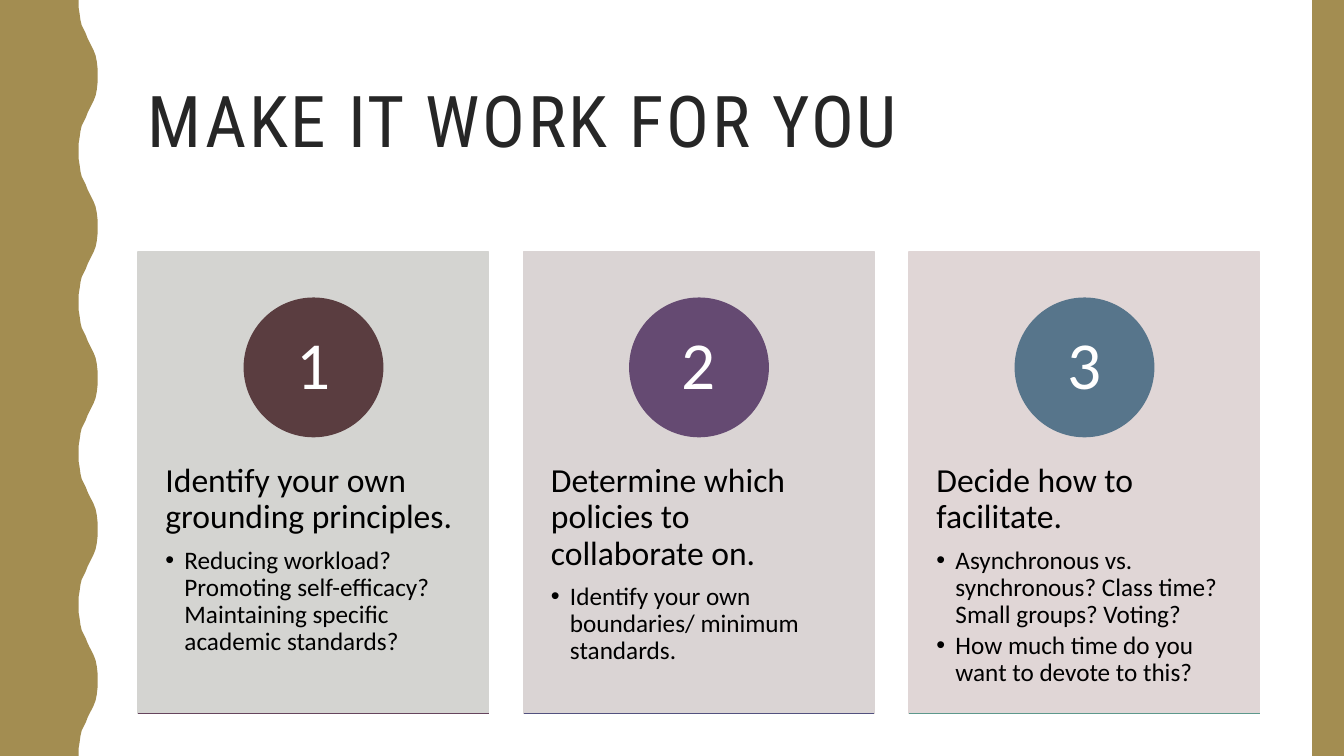
from lxml import etree
from pptx import Presentation
from pptx.dml.color import RGBColor
from pptx.enum.shapes import MSO_CONNECTOR, MSO_SHAPE
from pptx.enum.text import MSO_ANCHOR, PP_ALIGN
from pptx.oxml.ns import qn
from pptx.util import Cm, Pt

RECTANGLE, OVAL = MSO_SHAPE.RECTANGLE, MSO_SHAPE.OVAL
STRAIGHT = MSO_CONNECTOR.STRAIGHT
MIDDLE, CENTER = MSO_ANCHOR.MIDDLE, PP_ALIGN.CENTER

GOLD = RGBColor(0xA3, 0x8D, 0x51)
INK = RGBColor(0x26, 0x26, 0x26)
BLACK = RGBColor(0, 0, 0)
WHITE = RGBColor(0xFF, 0xFF, 0xFF)
GREY = RGBColor(0xD4, 0xD4, 0xD1)
MAUVE = RGBColor(0xDA, 0xD4, 0xD4)
ROSE = RGBColor(0xE0, 0xD6, 0xD6)
MAROON = RGBColor(0x5A, 0x3D, 0x40)
PURPLE = RGBColor(0x65, 0x4A, 0x72)
BLUE = RGBColor(0x57, 0x75, 0x8B)
PLUM = RGBColor(0x66, 0x44, 0x5D)
INDIGO = RGBColor(0x52, 0x51, 0x7F)
TEAL = RGBColor(0x5D, 0x98, 0x8C)

TITLE_FONT, BODY_FONT = "Roboto Condensed", "Calibri"
SLIDE_WIDTH, SLIDE_HEIGHT = 33.87, 19.05
WAVE_COUNT = 5
HALF_WAVE = [
    (1.98, 0), (1.98, 0.18), (2.01, 0.36), (2.03, 0.51), (2.06, 0.64),
    (2.11, 0.74), (2.16, 0.84), (2.21, 0.97), (2.26, 1.07), (2.31, 1.17),
    (2.36, 1.27), (2.41, 1.4), (2.44, 1.55), (2.46, 1.73), (2.46, 1.9),
]

STEPS = [
    (GREY, MAROON, PLUM, "Identify your own grounding principles.",
     ["Reducing workload? Promoting self-efficacy? "
      "Maintaining specific academic standards?"]),
    (MAUVE, PURPLE, INDIGO, "Determine which policies to collaborate on.",
     ["Identify your own boundaries/ minimum standards."]),
    (ROSE, BLUE, TEAL, "Decide how to facilitate.",
     ["Asynchronous vs. synchronous? Class time? Small groups? Voting?",
      "How much time do you want to devote to this?"]),
]


def paint(shape, color):
    shape.shadow.inherit = False
    shape.fill.solid()
    shape.fill.fore_color.rgb = color
    shape.line.color.rgb = color
    shape.line.width = Pt(1)


def add_block(slide, kind, left, top, width, height, color):
    block = slide.shapes.add_shape(kind, Cm(left), Cm(top), Cm(width), Cm(height))
    paint(block, color)
    return block


def add_text_area(slide, left, top, width, height):
    area = slide.shapes.add_textbox(Cm(left), Cm(top), Cm(width), Cm(height))
    area.text_frame.word_wrap = True
    return area.text_frame


def write(paragraph, text, size, color, font=BODY_FONT, after=0):
    paragraph.text = text
    paragraph.line_spacing = 0.9
    paragraph.space_after = Pt(after)
    for run in paragraph.runs:
        run.font.size = Pt(size)
        run.font.name = font
        run.font.color.rgb = color


def add_bullet(paragraph):
    properties = paragraph._p.get_or_add_pPr()
    properties.set("marL", str(Cm(0.48)))
    properties.set("indent", str(-Cm(0.48)))
    etree.SubElement(properties, qn("a:buFont")).set("typeface", "Arial")
    etree.SubElement(properties, qn("a:buChar")).set("char", "•")


def draw_wavy_edge(slide, height):
    period = height / WAVE_COUNT
    wave = HALF_WAVE + [(x, period - y) for x, y in reversed(HALF_WAVE)]
    crest = [(Cm(x), Cm(y + index * period))
             for index in range(WAVE_COUNT) for x, y in wave]
    builder = slide.shapes.build_freeform(0, 0)
    builder.add_line_segments(crest + [(0, Cm(height))], close=True)
    edge = builder.convert_to_shape()
    paint(edge, GOLD)
    edge.line.fill.background()


def draw_right_edge(slide, width, height):
    edge = add_block(slide, RECTANGLE, SLIDE_WIDTH - width, 0, width, height, GOLD)
    edge.line.fill.background()


def draw_title(slide, left, top, width, height):
    frame = add_text_area(slide, left, top, width, height)
    frame.vertical_anchor = MIDDLE
    title = frame.paragraphs[0]
    write(title, "MAKE IT WORK FOR YOU", 51, INK, TITLE_FONT)
    title.runs[0].font._element.set("spc", "200")


def draw_badge(slide, left, top, diameter, number, color):
    badge = add_block(slide, OVAL, left, top, diameter, diameter, color)
    frame = badge.text_frame
    frame.vertical_anchor = MIDDLE
    frame.margin_top = frame.margin_bottom = Cm(0.03)
    write(frame.paragraphs[0], str(number), 48, WHITE)
    frame.paragraphs[0].alignment = CENTER


def draw_step(slide, left, top, width, height, number, step):
    card_color, badge_color, rule_color, heading, details = step
    add_block(slide, RECTANGLE, left, top, width, height, card_color)

    frame = add_text_area(slide, left, top + 4.42, width, height - 4.64)
    frame.margin_left = frame.margin_right = Cm(0.69)
    frame.margin_top = frame.margin_bottom = Cm(0.91)
    write(frame.paragraphs[0], heading, 24, BLACK, after=8)
    for detail in details:
        paragraph = frame.add_paragraph()
        write(paragraph, detail, 18, BLACK, after=2.7)
        add_bullet(paragraph)

    diameter = 0.3 * height
    draw_badge(slide, left + (width - diameter) / 2, top + 0.1 * height,
               diameter, number, badge_color)

    bottom = Cm(top + height)
    rule = slide.shapes.add_connector(
        STRAIGHT, Cm(left), bottom, Cm(left + width), bottom)
    rule.line.color.rgb = rule_color
    rule.line.width = Pt(1)
    etree.SubElement(rule._element.spPr, qn("a:effectLst"))


def draw_steps(slide, left, top, width, height):
    card_width = 8.84
    pitch = (width - card_width) / (len(STEPS) - 1)
    for index, step in enumerate(STEPS):
        draw_step(slide, left + index * pitch, top, card_width, height,
                  index + 1, step)


def main():
    deck = Presentation()
    deck.slide_width, deck.slide_height = Cm(SLIDE_WIDTH), Cm(SLIDE_HEIGHT)
    slide = deck.slides.add_slide(deck.slide_layouts[6])
    draw_title(slide, 3.48, 1.07, 28.27, 4.14)
    draw_wavy_edge(slide, SLIDE_HEIGHT)
    draw_right_edge(slide, 0.8, SLIDE_HEIGHT)
    draw_steps(slide, 3.48, 6.35, 28.27, 11.63)
    deck.save("out.pptx")


if __name__ == "__main__":
    main()
